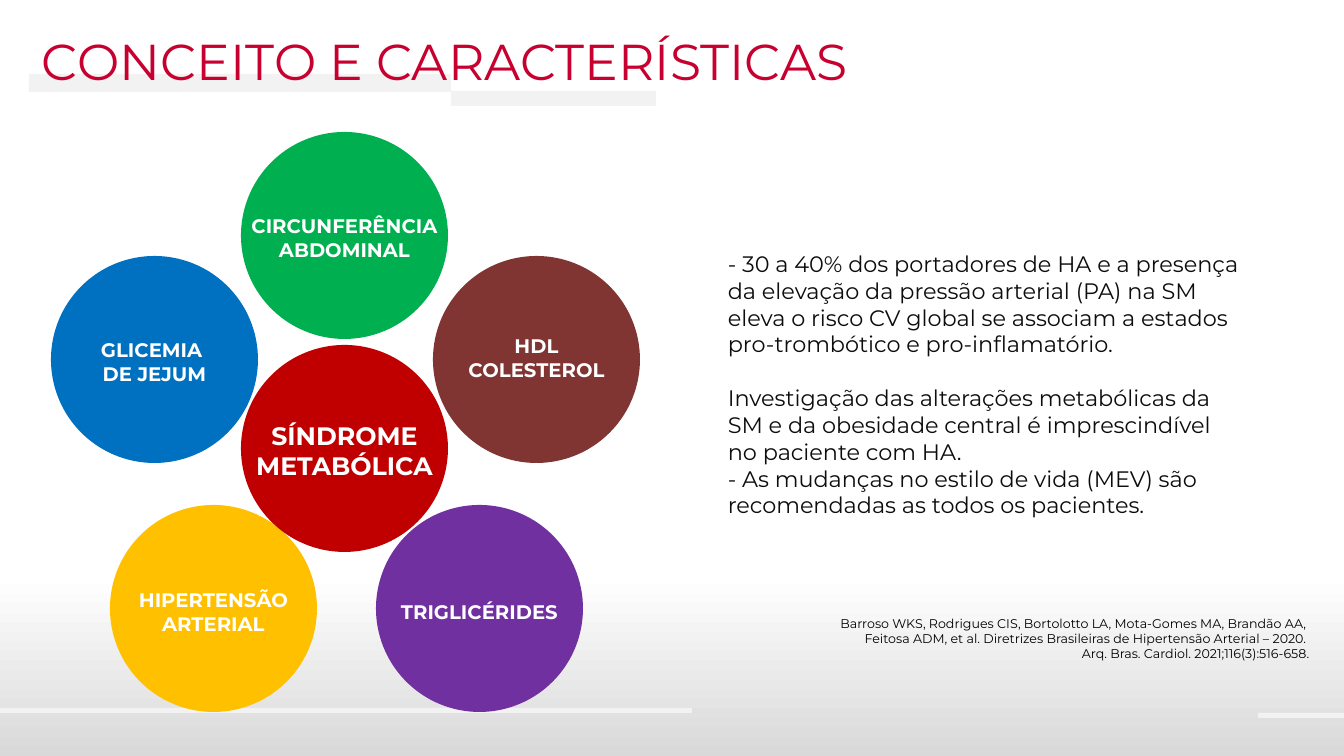
from pptx import Presentation
from pptx.dml.color import RGBColor
from pptx.enum.shapes import MSO_SHAPE
from pptx.enum.text import MSO_AUTO_SIZE, PP_ALIGN
from pptx.util import Emu, Pt

EMU_PER_PIXEL = 914400 / 100.8
FONT = "Montserrat"
DIAMETER = 207
LABEL_WIDTH = 209
COLORS = {
    "white": "FFFFFF",
    "shade": "D9D9D9",
    "bar": "F2F2F2",
    "title": "C80030",
    "body": "0D0D0D",
    "black": "000000",
    "blue": "0070C0",
    "yellow": "FFC000",
    "purple": "7030A0",
    "brown": "813533",
    "green": "00B050",
    "red": "C00000",
}
BARS = [(29, 74, 422, 18), (451, 91, 205, 15), (-2, 708, 694, 5), (1258, 713, 86, 5)]
CIRCLES = [
    (51, 256, "blue", "GLICEMIA \nDE JEJUM", 14, 57, 2),
    (110, 505, "yellow", "HIPERTENSÃO ARTERIAL", 14, 57, 3),
    (376, 505, "purple", "TRIGLICÉRIDES", 14, 34, 3),
    (433, 256, "brown", "HDL\nCOLESTEROL", 14, 57, -2),
    (241, 132, "green", "CIRCUNFERÊNCIA\nABDOMINAL", 14, 57, 2),
    (241, 345, "red", "SÍNDROME METABÓLICA", 18, 72, 3),
]
BODY = [
    "- 30 a 40% dos portadores de HA e a presença da elevação da pressão arterial (PA) na SM "
    "eleva o risco CV global se associam a estados pro-trombótico e pro-inflamatório.",
    "Investigação das alterações metabólicas da SM e da obesidade central é imprescindível "
    "no paciente com HA.",
    "- As mudanças no estilo de vida (MEV) são recomendadas as todos os pacientes.",
]
REFERENCE = [
    "Barroso WKS, Rodrigues CIS, Bortolotto LA, Mota-Gomes MA, Brandão AA, ",
    "Feitosa ADM, et al. Diretrizes Brasileiras de Hipertensão Arterial – 2020. ",
    "Arq. Bras. Cardiol. 2021;116(3):516-658.",
]


def px(value):
    return Emu(round(value * EMU_PER_PIXEL))


def color(name):
    return RGBColor.from_string(COLORS[name])


def add_filled_shape(slide, kind, box, fill_name):
    shape = slide.shapes.add_shape(kind, *map(px, box))
    shape.shadow.inherit = False
    shape.line.fill.background()
    shape.fill.solid()
    shape.fill.fore_color.rgb = color(fill_name)
    return shape


def add_background(slide):
    shape = add_filled_shape(slide, MSO_SHAPE.RECTANGLE, (-2, 0, 1349, 756), "white")
    shape.fill.gradient()
    shape.fill.gradient_angle = 270
    stops = [(0.76, "white"), (1, "shade")]
    for stop, (position, name) in zip(shape.fill.gradient_stops, stops):
        stop.position = position
        stop.color.rgb = color(name)


def add_text(slide, box, texts, size, color_name, align=PP_ALIGN.LEFT, bold=False):
    frame = slide.shapes.add_textbox(*map(px, box)).text_frame
    frame.word_wrap = True
    frame.auto_size = MSO_AUTO_SIZE.SHAPE_TO_FIT_TEXT
    for index, text in enumerate(texts):
        paragraph = frame.add_paragraph() if index else frame.paragraphs[0]
        paragraph.text = text
        paragraph.alignment = align
        paragraph.font.name = FONT
        paragraph.font.size = Pt(size)
        paragraph.font.bold = bold
        paragraph.font.color.rgb = color(color_name)
    return frame


def add_circle(slide, left, top, fill_name, label, size, label_height, label_shift):
    add_filled_shape(slide, MSO_SHAPE.OVAL, (left, top, DIAMETER, DIAMETER), fill_name)
    label_left = left + (DIAMETER - LABEL_WIDTH) / 2
    label_top = top + (DIAMETER - label_height) / 2 + label_shift
    label_box = (label_left, label_top, LABEL_WIDTH, label_height)
    add_text(slide, label_box, [label], size, "white", PP_ALIGN.CENTER, True)


def main():
    presentation = Presentation()
    presentation.slide_width = px(1344)
    presentation.slide_height = px(756)
    slide = presentation.slides.add_slide(presentation.slide_layouts[6])
    add_background(slide)
    for bar in BARS:
        add_filled_shape(slide, MSO_SHAPE.RECTANGLE, bar, "bar")
    add_text(slide, (32, 25, 1048, 72), ["CONCEITO E CARACTERÍSTICAS"], 36, "title")
    body = add_text(slide, (718, 245, 531, 281), BODY, 16, "body")
    body.paragraphs[1].space_before = Pt(19)
    for circle in CIRCLES:
        add_circle(slide, *circle)
    add_text(slide, (718, 611, 601, 56), REFERENCE, 9, "black", PP_ALIGN.RIGHT)
    presentation.save("out.pptx")


if __name__ == "__main__":
    main()
